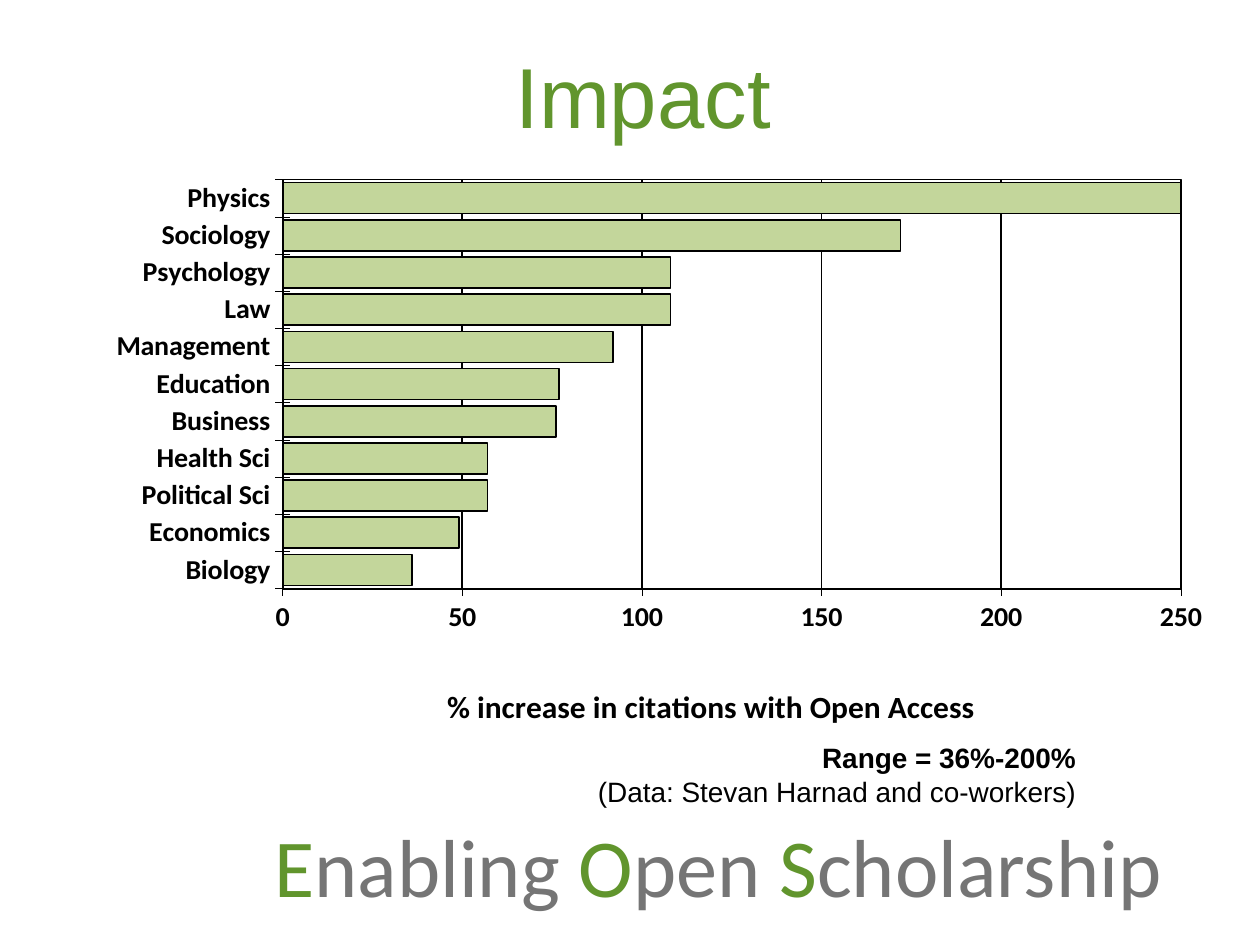
from typing import NamedTuple

from lxml import etree
from pptx import Presentation
from pptx import util as u
from pptx.chart.data import CategoryChartData
from pptx.dml.color import RGBColor
from pptx.enum import chart as ch
from pptx.enum import text as t
from pptx.oxml import parse_xml
from pptx.oxml.ns import nsdecls, qn

GREEN, GREY, BLACK, BAR = "61952D", "757575", "000000", "C3D69B"


class Place(NamedTuple):
    """Left, top, width and height in centimetres."""
    left: float
    top: float
    width: float
    height: float

    def lengths(self) -> list:
        return [u.Cm(value) for value in self]


class Span(NamedTuple):
    text: str
    color: str = BLACK
    bold: bool = False


def rgb(color: str) -> RGBColor:
    return RGBColor.from_string(color)


def style(font, name: str, size: float, color: str = BLACK, bold: bool = False) -> None:
    font.name, font.size, font.bold = name, u.Pt(size), bold
    font.color.rgb = rgb(color)


def draw_line(line, width: float) -> None:
    line.color.rgb = rgb(BLACK)
    line.width = u.Pt(width)


def add_text(slide, place: Place, lines: list[list[Span]], font: str, size: float,
             align=t.PP_ALIGN.LEFT) -> None:
    frame = slide.shapes.add_textbox(*place.lengths()).text_frame
    frame.word_wrap = True
    for index, spans in enumerate(lines):
        para = frame.add_paragraph() if index else frame.paragraphs[0]
        para.alignment = align
        for span in spans:
            run = para.add_run()
            run.text = span.text
            style(run.font, font, size, span.color, span.bold)


def set_layout(parent, index: int, **values) -> None:
    """Give a chart part a manual layout, as fractions of the chart."""
    for old in parent.findall(qn("c:layout")):
        parent.remove(old)
    layout = parse_xml(f"<c:layout {nsdecls('c')}><c:manualLayout/></c:layout>")
    for tag, value in values.items():
        etree.SubElement(layout[0], qn(f"c:{tag}")).set("val", str(value))
    parent.insert(index, layout)


def add_impact_chart(slide, place: Place, rows: dict[str, int]) -> None:
    data = CategoryChartData()
    data.categories = list(rows)
    data.add_series("Series 1", list(rows.values()))
    chart = slide.shapes.add_chart(
        ch.XL_CHART_TYPE.BAR_CLUSTERED, *place.lengths(), data).chart
    chart.has_legend = chart.has_title = False
    style(chart.font, "Calibri", 10, bold=True)

    # Bars
    plot = chart.plots[0]
    plot.gap_width = 20
    plot.vary_by_categories = False
    bars = plot.series[0].format
    bars.fill.solid()
    bars.fill.fore_color.rgb = rgb(BAR)
    draw_line(bars.line, 1)

    # Axes
    for axis in (chart.category_axis, chart.value_axis):
        axis.major_tick_mark = ch.XL_TICK_MARK.CROSS
        axis.minor_tick_mark = ch.XL_TICK_MARK.NONE
        style(axis.tick_labels.font, "Calibri", 16, bold=True)
        draw_line(axis.format.line, 0.25)
    chart.category_axis.tick_label_position = ch.XL_TICK_LABEL_POSITION.LOW
    values = chart.value_axis
    values.minimum_scale, values.maximum_scale, values.major_unit = 0, 250, 50
    values.has_major_gridlines = True
    draw_line(values.major_gridlines.format.line, 1)

    # Axis title
    frame = values.axis_title.text_frame
    frame.text = "% increase in citations with Open Access"
    style(frame.paragraphs[0].runs[0].font, "Calibri", 18, bold=True)
    set_layout(values.axis_title._element, 1, xMode="edge", yMode="edge", x=0.34, y=0.92)

    # Plot area and its frame
    area = chart._chartSpace.chart.plotArea
    set_layout(area, 0, layoutTarget="inner", xMode="edge", yMode="edge",
               x=0.205, y=0.002, w=0.764, h=0.751)
    area.append(parse_xml(
        f'<c:spPr {nsdecls("c", "a")}><a:noFill/><a:ln w="{u.Pt(1)}"><a:solidFill>'
        f'<a:srgbClr val="{BLACK}"/></a:solidFill></a:ln></c:spPr>'))


def main() -> None:
    deck = Presentation()
    deck.slide_width, deck.slide_height = u.Cm(25.4), u.Cm(19.05)
    slide = deck.slides.add_slide(deck.slide_layouts[5])

    # Title
    title = slide.shapes.title
    title.left, title.top, title.width, title.height = Place(1.98, 0.64, 21.97, 2.54).lengths()
    title.text_frame.text = "Impact"
    title.text_frame.vertical_anchor = t.MSO_ANCHOR.MIDDLE
    para = title.text_frame.paragraphs[0]
    para.alignment = t.PP_ALIGN.CENTER
    style(para.runs[0].font, "Arial", 48.6, GREEN)

    # Chart
    add_impact_chart(slide, Place(0.84, 3.6, 23.7, 11.23), {
        "Biology": 36, "Economics": 49, "Political Sci": 57, "Health Sci": 57,
        "Business": 76, "Education": 77, "Management": 92, "Law": 108,
        "Psychology": 108, "Sociology": 172, "Physics": 250})

    # Range and data credit
    add_text(slide, Place(7.77, 14.81, 14.17, 1.63),
             [[Span("Range = 36%-200%", bold=True)],
              [Span("(Data: Stevan Harnad and co-workers)")]],
             "Arial", 16, t.PP_ALIGN.RIGHT)

    # Footer line with green initials
    words = ("Enabling ", "Open ", "Scholarship")
    spans = [span for word in words
             for span in (Span(word[0], GREEN), Span(word[1:], GREY))]
    add_text(slide, Place(5.28, 16.31, 19.45, 2.26), [spans], "Calibri", 47)

    deck.save("out.pptx")


if __name__ == "__main__":
    main()
